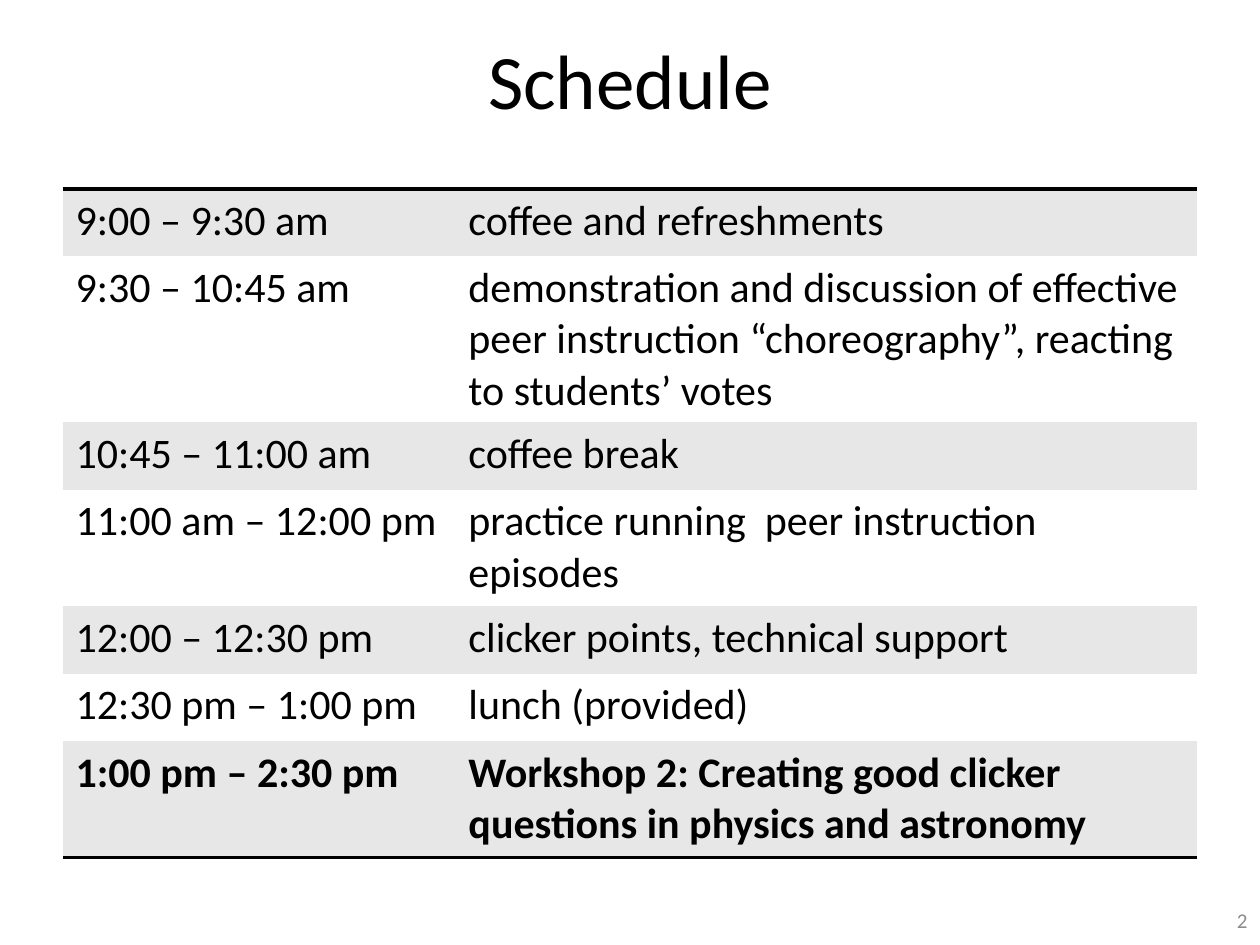
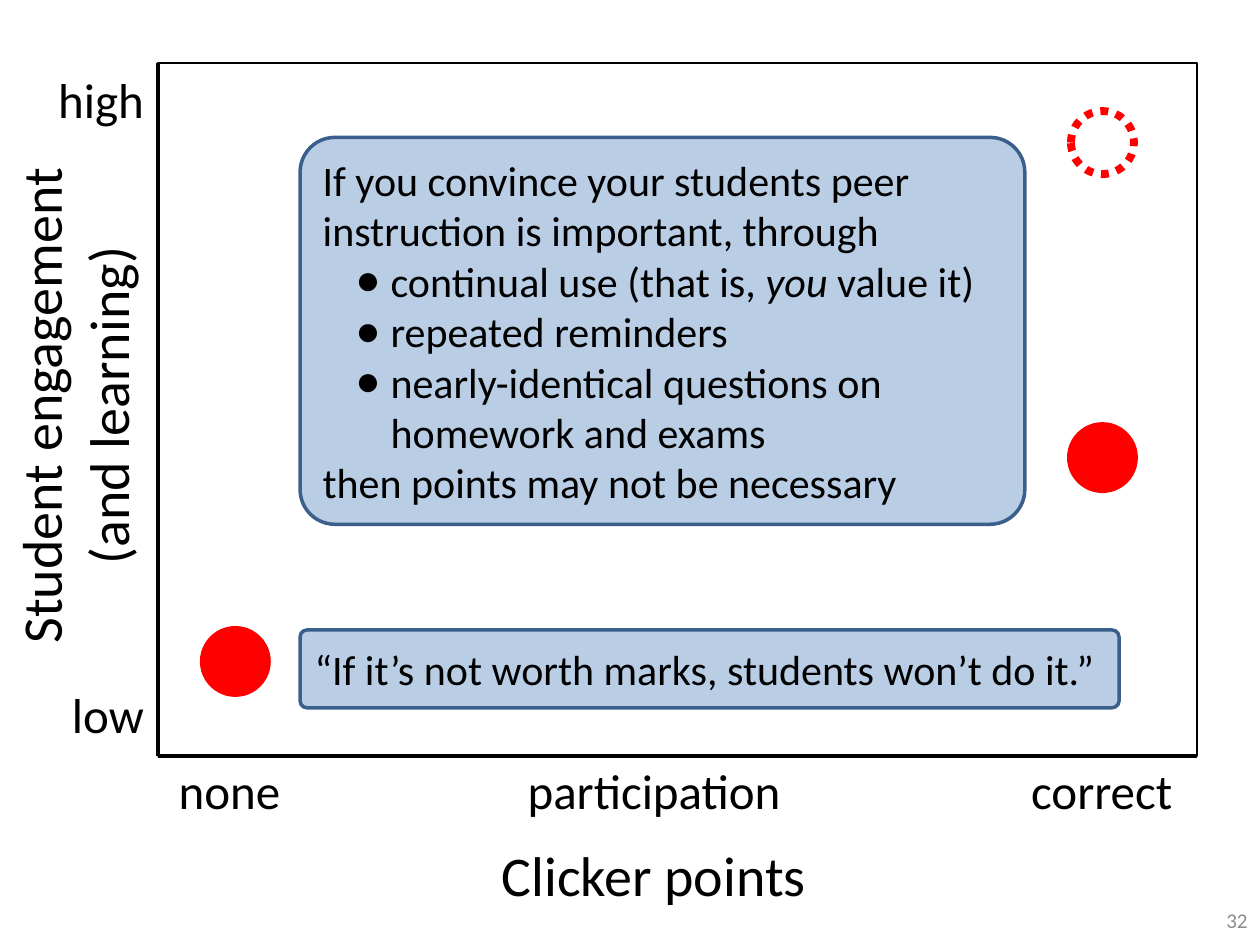
from dataclasses import dataclass

from lxml import etree
from pptx import Presentation
from pptx.dml.color import RGBColor
from pptx.enum import dml, shapes, text
from pptx.oxml import ns
from pptx.util import Cm, Pt


@dataclass(frozen=True)
class Theme:
    font: str = "Calibri"
    bullet_font: str = "Arial"
    ink: RGBColor = RGBColor(0, 0, 0)
    paper: RGBColor = RGBColor(0xFF, 0xFF, 0xFF)
    band: RGBColor = RGBColor(0xE7, 0xE7, 0xE7)
    muted: RGBColor = RGBColor(0x8C, 0x8C, 0x8C)
    point: RGBColor = RGBColor(0xFF, 0, 0)
    callout: RGBColor = RGBColor(0xB9, 0xCD, 0xE5)
    callout_line: RGBColor = RGBColor(0x3A, 0x5F, 0x8C)
    title: int = 44
    axis: int = 32
    tick: int = 28
    body: int = 24
    number: int = 12


T = Theme()
LEFT, CENTER, RIGHT = text.PP_ALIGN.LEFT, text.PP_ALIGN.CENTER, text.PP_ALIGN.RIGHT
TOP, MIDDLE = text.MSO_ANCHOR.TOP, text.MSO_ANCHOR.MIDDLE


def add_run(p, words, size, color=T.ink, bold=False, italic=False):
    r = p.add_run()
    r.text = words
    r.font.name, r.font.size = T.font, Pt(size)
    r.font.bold, r.font.italic = bold, italic
    r.font.color.rgb = color


def add_label(s, words, box, size, align, color=T.ink, anchor=TOP, rotation=0):
    """Add an unwrapped text box, one paragraph for each line of words."""
    sp = s.shapes.add_textbox(*map(Cm, box))
    sp.rotation = rotation
    tf = sp.text_frame
    tf.word_wrap, tf.vertical_anchor = False, anchor
    for i, line in enumerate(words.splitlines()):
        p = tf.add_paragraph() if i else tf.paragraphs[0]
        p.alignment = align
        add_run(p, line, size, color)


prs = Presentation()
prs.slide_width, prs.slide_height = Cm(25.4), Cm(19.05)
schedule_slide = prs.slides.add_slide(prs.slide_layouts[5])
points_slide = prs.slides.add_slide(prs.slide_layouts[6])
for s, number in ((schedule_slide, "2"), (points_slide, "32")):
    add_label(s, number, (19.48, 18.03, 5.92, 1.02), T.number, RIGHT, T.muted, MIDDLE)

# Schedule
title = schedule_slide.shapes.title
title.left, title.top, title.width, title.height = map(Cm, (1.27, 0, 22.86, 3.18))
title.text_frame.vertical_anchor = MIDDLE
p = title.text_frame.paragraphs[0]
p.alignment = CENTER
add_run(p, "Schedule", T.title)

# time, activity, lines of text in the row
schedule = [
    ("9:00 – 9:30 am", "coffee and refreshments", 1),
    ("9:30 – 10:45 am", "demonstration and discussion of effective peer instruction "
     "“choreography”, reacting to students’ votes", 3),
    ("10:45 – 11:00 am", "coffee break", 1),
    ("11:00 am – 12:00 pm", "practice running  peer instruction episodes", 2),
    ("12:00 – 12:30 pm", "clicker points, technical support", 1),
    ("12:30 pm – 1:00 pm", "lunch (provided)", 1),
    ("1:00 pm – 2:30 pm", "Workshop 2: Creating good clicker questions in physics "
     "and astronomy", 2),
]
last = len(schedule) - 1
table = schedule_slide.shapes.add_table(
    len(schedule), 2, Cm(1.27), Cm(3.81), Cm(22.86), Cm(13.4)).table
table.first_row = table.horz_banding = False
# built-in "No Style, No Grid"
table._tbl.tblPr.find(ns.qn("a:tableStyleId")).text = "{2D5ABB26-0587-4C30-8999-92F81FD0307C}"
table.columns[0].width, table.columns[1].width = Cm(7.92), Cm(14.94)
for i, (time, activity, lines) in enumerate(schedule):
    table.rows[i].height = Cm(1.36 + 0.99 * (lines - 1))
    for cell, words in zip(table.rows[i].cells, (time, activity)):
        add_run(cell.text_frame.paragraphs[0], words, T.body, bold=i == last)
        cell.fill.solid()
        cell.fill.fore_color.rgb = T.paper if i % 2 else T.band
        if i in (0, last):
            tag = "a:lnB" if i else "a:lnT"
            ln = etree.Element(ns.qn(tag), w=str(Pt(2)))
            fill = etree.SubElement(ln, ns.qn("a:solidFill"))
            etree.SubElement(fill, ns.qn("a:srgbClr"), val=str(T.ink))
            cell._tc.get_or_add_tcPr().insert(0, ln)

# Engagement against clicker points: plot frame and axes
x0, y0, x1, y1 = 3.18, 1.27, 24.13, 15.24
s = points_slide
frame = s.shapes.add_shape(shapes.MSO_SHAPE.RECTANGLE, *map(Cm, (x0, y0, x1 - x0, y1 - y0)))
frame.shadow.inherit = False
frame.fill.background()
frame.line.color.rgb, frame.line.width = T.ink, Pt(1)
for ends in ((x0, y0, x0, y1), (x1, y1, x0, y1)):
    axis = s.shapes.add_connector(shapes.MSO_CONNECTOR.STRAIGHT, *map(Cm, ends))
    axis.line.color.rgb, axis.line.width = T.ink, Pt(2.25)
    etree.SubElement(axis._element.spPr, ns.qn("a:effectLst"))

for words, x, width in (("none", 3.33, 2.59), ("participation", 10.34, 5.69),
                        ("correct", 20.52, 3.38)):
    add_label(s, words, (x, 15.21, width, 1.45), T.tick, CENTER)
for words, y in (("high", 1.27), ("low", 13.67)):
    add_label(s, words, (0.89, y, 2.26, 1.45), T.tick, RIGHT)
add_label(s, "Clicker points", (9.83, 16.81, 6.71, 1.63), T.axis, CENTER)
add_label(s, "Student engagement\n(and learning)", (-3.61, 6.68, 10.21, 3),
          T.axis, CENTER, rotation=270)

for x, y, observed in ((4.11, 12.7, True), (21.59, 2.24, False), (21.59, 8.59, True)):
    dot = s.shapes.add_shape(shapes.MSO_SHAPE.OVAL, Cm(x), Cm(y), Cm(1.27), Cm(1.27))
    dot.shadow.inherit = False
    dot.line.color.rgb, dot.line.width = T.point, Pt(4.5)
    if observed:
        dot.fill.solid()
        dot.fill.fore_color.rgb = T.point
    else:
        dot.fill.background()
        dot.line.dash_style = dml.MSO_LINE.ROUND_DOT

# Callouts: each paragraph is (bulleted, [(words, italic), ...])
quote = [(False, [("“If it’s not worth marks, students won’t do it.”", False)])]
advice = [
    (False, [("If you convince your students peer instruction is important, through", False)]),
    (True, [("continual use (that is, ", False), ("you", True), (" value it)", False)]),
    (True, [("repeated reminders", False)]),
    (True, [("nearly-identical questions on homework and exams", False)]),
    (False, [("then points may not be necessary", False)]),
]
for y, width, height, paragraphs in ((12.7, 16.51, 1.57, quote), (2.77, 14.61, 7.8, advice)):
    sp = s.shapes.add_shape(shapes.MSO_SHAPE.ROUNDED_RECTANGLE,
                            Cm(6.05), Cm(y), Cm(width), Cm(height))
    sp.adjustments[0] = 0.09
    sp.shadow.inherit = False
    sp.fill.solid()
    sp.fill.fore_color.rgb = T.callout
    sp.line.color.rgb, sp.line.width = T.callout_line, Pt(2)
    tf = sp.text_frame
    tf.word_wrap, tf.vertical_anchor = True, MIDDLE
    for i, (bulleted, runs) in enumerate(paragraphs):
        p = tf.add_paragraph() if i else tf.paragraphs[0]
        p.alignment = LEFT
        if bulleted:
            pPr = p._p.get_or_add_pPr()
            pPr.set("marL", str(Cm(1.37)))
            pPr.set("indent", str(-Cm(0.71)))
            etree.SubElement(pPr, ns.qn("a:buFont"), typeface=T.bullet_font)
            etree.SubElement(pPr, ns.qn("a:buChar"), char="●")
        for words, italic in runs:
            add_run(p, words, T.body, italic=italic)

prs.save("out.pptx")
